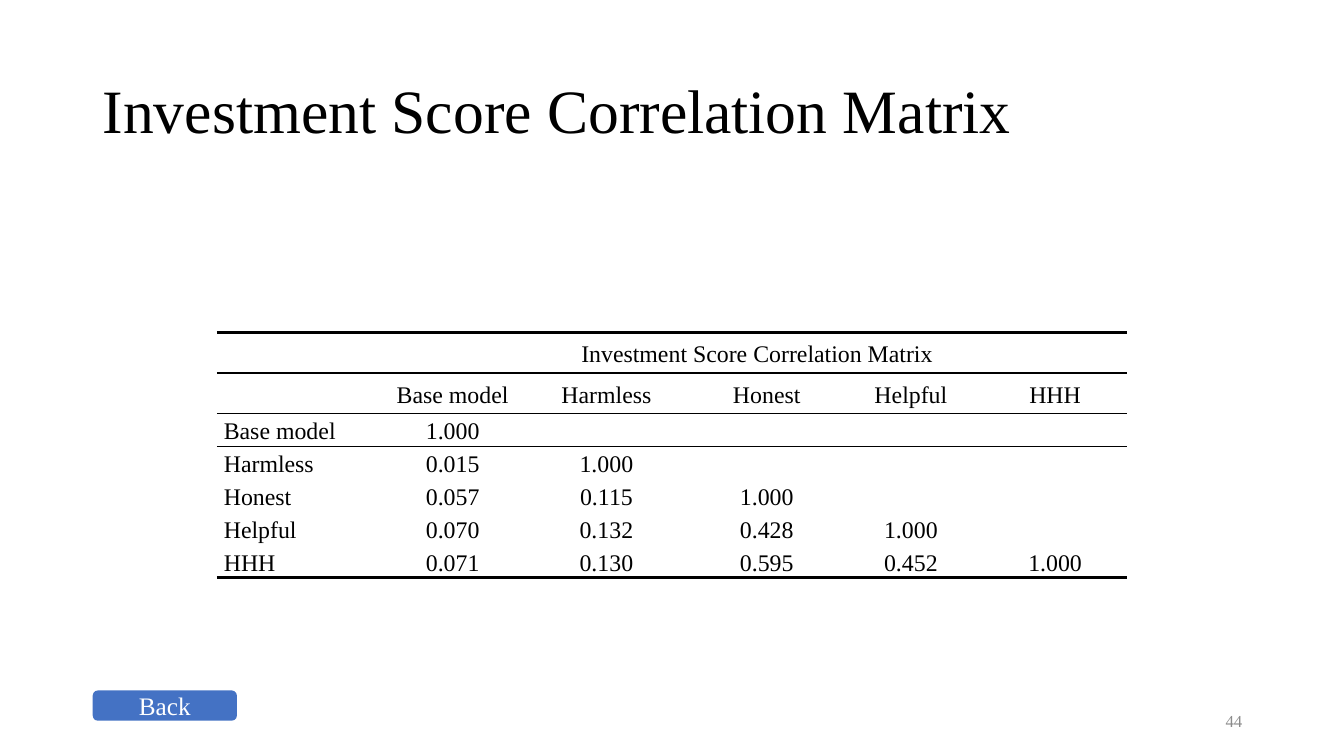
from lxml import etree
from pptx import Presentation
from pptx.dml.color import RGBColor
from pptx.enum.shapes import MSO_SHAPE
from pptx.enum.text import MSO_ANCHOR, PP_ALIGN
from pptx.oxml.ns import qn
from pptx.util import Inches, Pt

# Content
TITLE = "Investment Score Correlation Matrix"
MODELS = ["Base model", "Harmless", "Honest", "Helpful", "HHH"]
SCORES = [
    ["1.000"],
    ["0.015", "1.000"],
    ["0.057", "0.115", "1.000"],
    ["0.070", "0.132", "0.428", "1.000"],
    ["0.071", "0.130", "0.595", "0.452", "1.000"],
]
PAGE = "44"
BACK = "Back"

# Format
FONT = "Times New Roman"
BLACK = RGBColor(0x00, 0x00, 0x00)
WHITE = RGBColor(0xFF, 0xFF, 0xFF)
GRAY = RGBColor(0x8C, 0x8C, 0x8C)
BLUE = RGBColor(0x44, 0x72, 0xC4)
COL_W = [1.69, 1.3, 1.75, 1.43, 1.43, 1.43]
ROW_H = [0.4, 0.4] + [0.3] * len(MODELS)
TABLE_SIZE = 17
THICK, THIN = 2.25, 1
RULES = [THICK, THIN, THIN] + [None] * (len(MODELS) - 1) + [THICK]
NO_STYLE = "{2D5ABB26-0587-4C30-8999-92F81FD0307C}"


def write(tf, text, size=18, color=BLACK, align=PP_ALIGN.LEFT, spacing=1.0):
    tf.word_wrap = True
    p = tf.paragraphs[0]
    p.alignment, p.line_spacing = align, spacing
    if not text:
        etree.SubElement(p._p, qn("a:endParaRPr"), sz=str(size * 100))
        return
    r = p.add_run()
    r.text = text
    r.font.name, r.font.size, r.font.color.rgb = FONT, Pt(size), color


def add_text(s, box, text, **fmt):
    tf = s.shapes.add_textbox(*map(Inches, box)).text_frame
    tf.vertical_anchor = MSO_ANCHOR.MIDDLE
    write(tf, text, **fmt)


def set_border(cell, index, tag, width):
    ln = etree.Element(qn(tag), w=str(Pt(width)))
    fill = etree.SubElement(ln, qn("a:solidFill"))
    etree.SubElement(fill, qn("a:srgbClr"), val=str(BLACK))
    cell._tc.get_or_add_tcPr().insert(index, ln)


def add_matrix(s, left, top):
    rows = [["", TITLE], [""] + MODELS]
    rows += [[model] + scores for model, scores in zip(MODELS, SCORES)]
    tbl = s.shapes.add_table(len(rows), len(COL_W), Inches(left), Inches(top),
                             Inches(sum(COL_W)), Inches(sum(ROW_H))).table
    tbl.first_row = tbl.horz_banding = False
    tbl._tbl.tblPr.find(qn("a:tableStyleId")).text = NO_STYLE
    for col, width in zip(tbl.columns, COL_W):
        col.width = Inches(width)
    for i, row in enumerate(rows):
        tbl.rows[i].height = Inches(ROW_H[i])
        for j in range(len(COL_W)):
            cell = tbl.cell(i, j)
            cell.fill.solid()
            cell.fill.fore_color.rgb = WHITE
            cell.vertical_anchor = MSO_ANCHOR.MIDDLE
            cell.margin_left = cell.margin_right = Inches(0.07)
            cell.margin_top = cell.margin_bottom = 0
            write(cell.text_frame, row[j] if j < len(row) else "",
                  size=TABLE_SIZE, spacing=1.15,
                  align=PP_ALIGN.CENTER if j else PP_ALIGN.LEFT)
            # Rules above and below the row
            edges = [(tag, w) for tag, w in
                     zip(("a:lnT", "a:lnB"), RULES[i:i + 2]) if w]
            for k, (tag, width) in enumerate(edges):
                set_border(cell, k, tag, width)
    tbl.cell(0, 1).merge(tbl.cell(0, len(COL_W) - 1))


def add_button(s, box, text):
    sp = s.shapes.add_shape(MSO_SHAPE.ROUNDED_RECTANGLE, *map(Inches, box))
    sp.shadow.inherit = False
    sp.fill.solid()
    sp.fill.fore_color.rgb = BLUE
    sp.line.fill.background()
    sp.text_frame.vertical_anchor = MSO_ANCHOR.MIDDLE
    write(sp.text_frame, text, color=WHITE, align=PP_ALIGN.CENTER)


def main():
    prs = Presentation()
    prs.slide_width, prs.slide_height = Inches(13.33), Inches(7.5)
    s = prs.slides.add_slide(prs.slide_layouts[6])
    add_text(s, (0.92, 0.4, 11.5, 1.45), TITLE, size=44, spacing=0.9)
    add_text(s, (9.42, 6.95, 3, 0.4), PAGE, size=12, color=GRAY,
             align=PP_ALIGN.RIGHT)
    add_button(s, (0.92, 6.85, 1.43, 0.3), BACK)
    add_matrix(s, 2.15, 3.3)
    prs.save("out.pptx")


if __name__ == "__main__":
    main()
